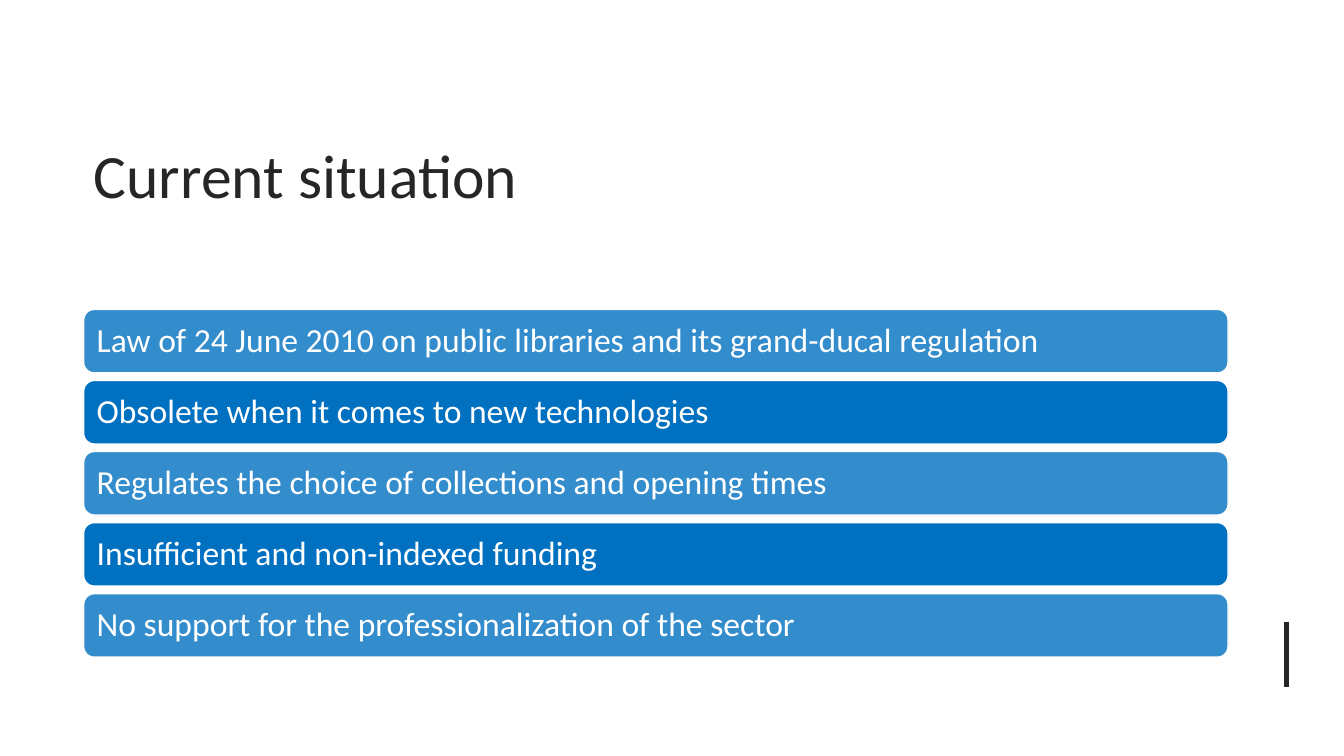
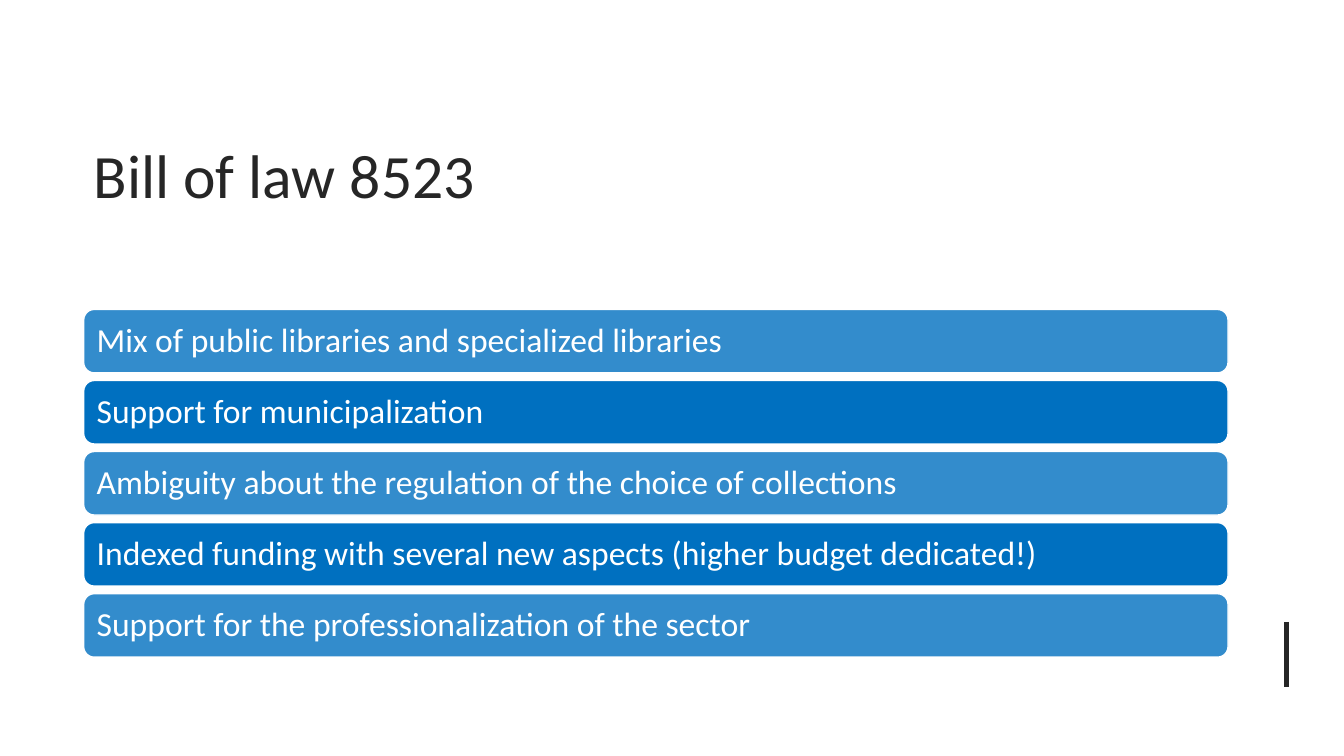
from lxml.etree import SubElement
from pptx import Presentation
from pptx.dml.color import RGBColor
from pptx.enum.shapes import MSO_CONNECTOR, MSO_SHAPE
from pptx.enum.text import MSO_ANCHOR, PP_ALIGN
from pptx.oxml.ns import qn
from pptx.util import Inches, Pt

COLOURS = {"ink": "262626", "bar": "0070C0", "white": "FFFFFF"}
FONT = "Calibri"
LEFT, WIDTH = 0.83, 11.35
FIRST_TOP, LAST_TOP, BAR_HEIGHT = 3.07, 5.89, 0.63

SLIDES = [
    ("Current situation", [
        "Law of 24 June 2010 on public libraries and its grand-ducal regulation",
        "Obsolete when it comes to new technologies",
        "Regulates the choice of collections and opening times",
        "Insufficient and non-indexed funding",
        "No support for the professionalization of the sector",
    ]),
    ("Bill of law 8523", [
        "Mix of public libraries and specialized libraries",
        "Support for municipalization",
        "Ambiguity about the regulation of the choice of collections",
        "Indexed funding with several new aspects (higher budget dedicated!)",
        "Support for the professionalization of the sector",
    ]),
]


def colour(name):
    return RGBColor.from_string(COLOURS[name])


def apply_format(target, values):
    for name, value in values.items():
        setattr(target, name, value)


class DeckBuilder:
    def __init__(self):
        self.deck = Presentation()
        apply_format(self.deck, {"slide_width": Inches(13.33), "slide_height": Inches(7.5)})
        self.page = None

    def add_page(self, title):
        self.page = self.deck.slides.add_slide(self.deck.slide_layouts[5])
        box = self.page.shapes.title
        apply_format(box, {"left": Inches(LEFT), "top": Inches(0.94),
                           "width": Inches(WIDTH), "height": Inches(1.57)})
        self.set_text(box, title, 44, "ink")
        self.add_corner_rule()

    def set_text(self, box, text, size, ink, spacing=1.0):
        """Put one left-aligned, vertically centred paragraph in a box."""
        frame = box.text_frame
        apply_format(frame, {"word_wrap": True, "vertical_anchor": MSO_ANCHOR.MIDDLE,
                             "margin_left": Inches(0.1), "margin_right": Inches(0.1)})
        para = frame.paragraphs[0]
        apply_format(para, {"alignment": PP_ALIGN.LEFT, "line_spacing": spacing})
        span = para.add_run()
        span.text = text
        apply_format(span.font, {"name": FONT, "size": Pt(size)})
        span.font.color.rgb = colour(ink)

    def add_corner_rule(self):
        rule = self.page.shapes.add_connector(
            MSO_CONNECTOR.STRAIGHT, Inches(12.76), Inches(6.17), Inches(12.76), Inches(6.82))
        rule.line.width = Pt(3)
        rule.line.color.rgb = colour("ink")
        SubElement(rule.element.spPr, qn("a:effectLst"))

    def add_bar(self, text, top, opacity):
        bar = self.page.shapes.add_shape(
            MSO_SHAPE.ROUNDED_RECTANGLE, Inches(LEFT), Inches(top),
            Inches(WIDTH), Inches(BAR_HEIGHT))
        bar.shadow.inherit = False
        bar.fill.solid()
        bar.fill.fore_color.rgb = colour("bar")
        if opacity < 100:
            fill_colour = bar.element.spPr.find(qn("a:solidFill")).find(qn("a:srgbClr"))
            SubElement(fill_colour, qn("a:alpha"), val=str(opacity * 1000))
        bar.line.color.rgb = colour("white")
        bar.line.width = Pt(1)
        self.set_text(bar, text, 24, "white", spacing=0.9)

    def add_bars(self, texts):
        """Stack bars at an equal pitch, alternating light and full colour."""
        pitch = (LAST_TOP - FIRST_TOP) / (len(texts) - 1)
        for index, text in enumerate(texts):
            self.add_bar(text, FIRST_TOP + index * pitch, 100 if index % 2 else 80)


def main():
    builder = DeckBuilder()
    for title, texts in SLIDES:
        builder.add_page(title)
        builder.add_bars(texts)
    builder.deck.save("out.pptx")


if __name__ == "__main__":
    main()
